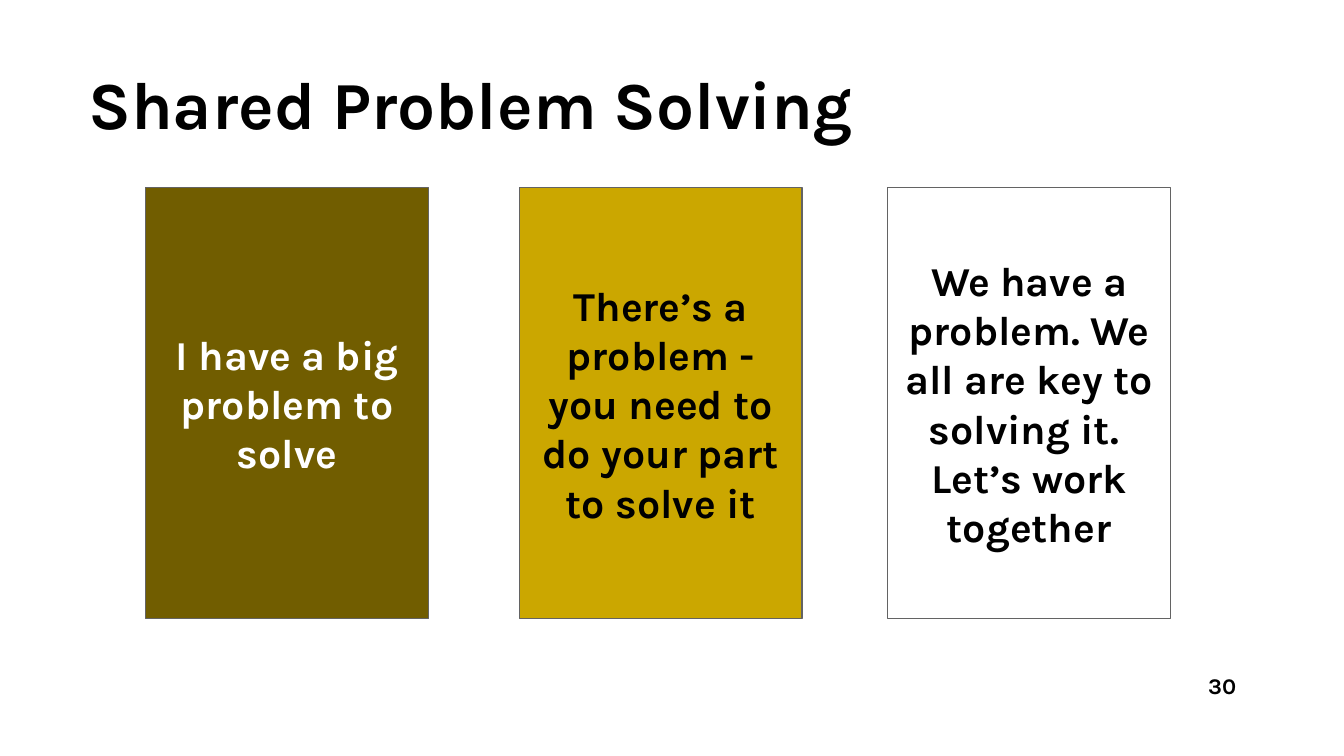
import pptx
import pptx.dml.color
import pptx.enum.shapes
import pptx.enum.text
import pptx.util

PX = 9525  # EMU per px, 96 px to the inch
ALIGN = pptx.enum.text.PP_ALIGN
ANCHOR = pptx.enum.text.MSO_ANCHOR


def color(hex_string):
    return pptx.dml.color.RGBColor.from_string(hex_string)


def write(shape, text, size, fill="000000", align=ALIGN.LEFT, anchor=ANCHOR.MIDDLE, inset=10):
    """Put one bold paragraph into the shape."""
    frame = shape.text_frame
    frame.word_wrap = True
    frame.auto_size = pptx.enum.text.MSO_AUTO_SIZE.NONE
    frame.vertical_anchor = anchor
    frame.margin_left = frame.margin_right = inset * PX
    frame.margin_top = frame.margin_bottom = inset * PX
    paragraph = frame.paragraphs[0]
    paragraph.alignment = align
    run = paragraph.add_run()
    run.text = text
    run.font.name = "Karla"
    run.font.size = pptx.util.Pt(size)
    run.font.bold = True
    run.font.color.rgb = color(fill)


presentation = pptx.Presentation()
presentation.slide_width = 960 * PX
presentation.slide_height = 540 * PX
slide = presentation.slides.add_slide(presentation.slide_layouts[5])

title = slide.shapes.title
title.left, title.top, title.width, title.height = 63 * PX, 41 * PX, 880 * PX, 65 * PX
write(title, "Shared Problem Solving", 36, inset=0)

page_number = slide.shapes.add_textbox(835 * PX, 470 * PX, 58 * PX, 41 * PX)
write(page_number, "30", 12, align=ALIGN.RIGHT, anchor=ANCHOR.TOP)

cards = [
    (104, "715D00", "FFFFFF", "I have a big problem to solve"),
    (371, "CBA700", "000000", "There’s a problem - you need to do your part to solve it"),
    (634, "FFFFFF", "000000", "We have a problem. We all are key to solving it.  Let’s work together"),
]
for left, background, text_color, text in cards:
    card = slide.shapes.add_shape(
        pptx.enum.shapes.MSO_SHAPE.RECTANGLE, left * PX, 134 * PX, 202 * PX, 308 * PX)
    card.shadow.inherit = False
    card.fill.solid()
    card.fill.fore_color.rgb = color(background)
    card.line.color.rgb = color("636363")
    card.line.width = pptx.util.Pt(0.75)
    write(card, text, 22, fill=text_color, align=ALIGN.CENTER)

presentation.save("out.pptx")
